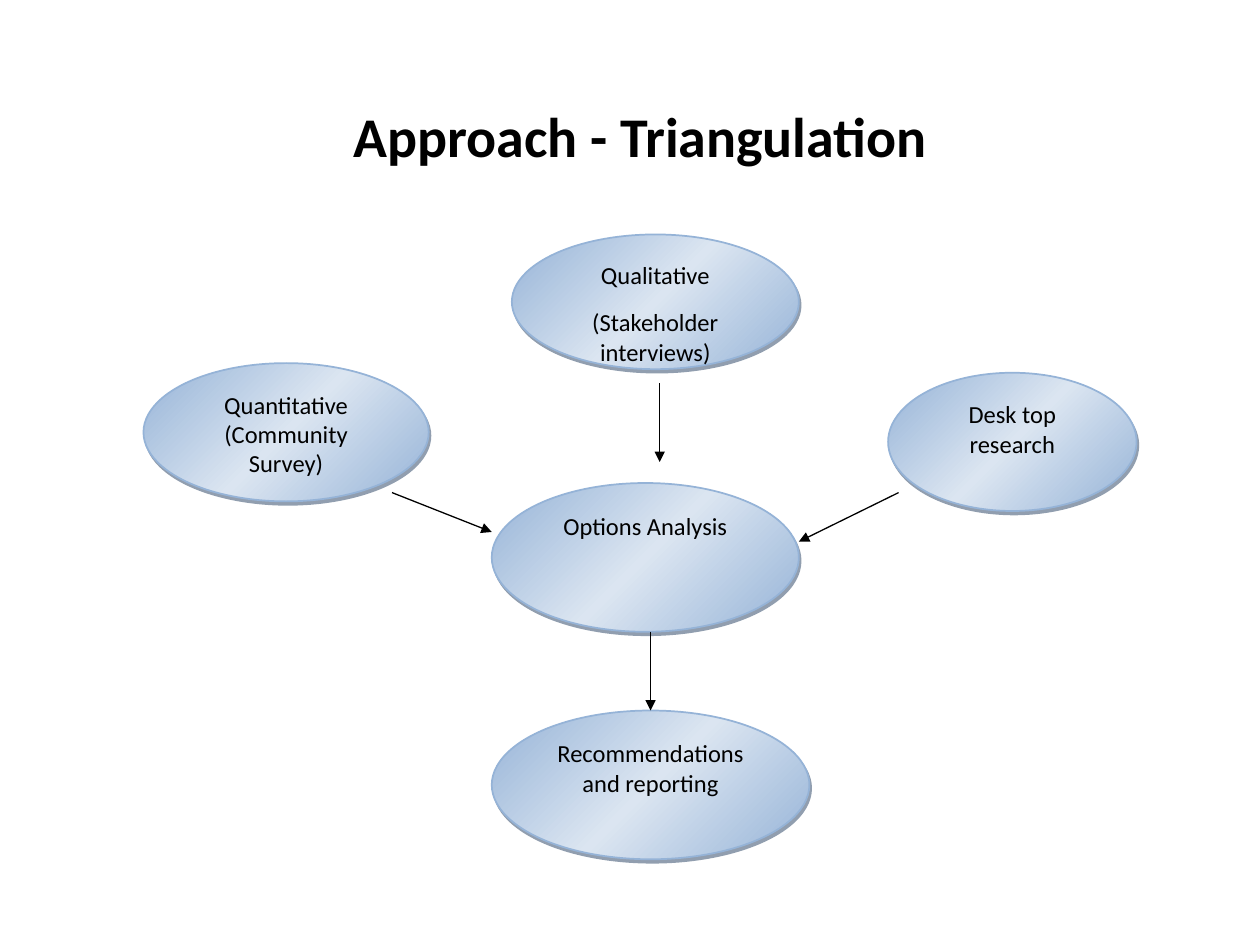
from copy import deepcopy

from lxml.etree import SubElement
from pptx import Presentation
from pptx.dml.color import RGBColor
from pptx.enum.shapes import MSO_CONNECTOR as CONN, MSO_SHAPE as SHAPE
from pptx.enum.text import MSO_ANCHOR as ANCHOR, PP_ALIGN as ALIGN
from pptx.oxml.ns import qn
from pptx.util import Pt

FONT = "Calibri"
COLORS = {"text": "000000", "edge": "95B3D7", "glow": "DBE5F1", "shadow": "243F60"}

# name: (left, top, width, height), paragraphs
NODES = {
    "survey": ((82, 207.5, 163, 79), ["Quantitative\n(Community Survey)"]),
    "interviews": ((292.5, 134, 164, 77), ["Qualitative", "(Stakeholder interviews)"]),
    "research": ((507.5, 213, 142, 79), ["Desk top research"]),
    "analysis": ((281, 276, 175.5, 85), ["Options Analysis"]),
    "reporting": ((281, 406, 181.5, 85), ["Recommendations and reporting"]),
}
# start, end, node whose top the arrow meets
ARROWS = [
    ((224, 281.5), (281, 304), None),
    ((377, 219), (377, 264), None),
    ((513.5, 281.5), (456.5, 309.5), None),
    ((371.75, 361), (371.75, 406), "reporting"),
]


def color(name):
    return RGBColor.from_string(COLORS[name])


def write(tf, lines, size, bold=False, after=0):
    tf.word_wrap = True
    for i, line in enumerate(lines):
        p = tf.paragraphs[0] if i == 0 else tf.add_paragraph()
        p.text = line
        p.alignment = ALIGN.CENTER
        p.space_after = Pt(after)
        for r in p.runs:
            r.font.name, r.font.size, r.font.bold = FONT, Pt(size), bold
            r.font.color.rgb = color("text")


def add_title(slide, box, text):
    tf = slide.shapes.add_textbox(*map(Pt, box)).text_frame
    write(tf, [text], 32, bold=True)
    tf.vertical_anchor = ANCHOR.MIDDLE


def fill_gradient(sp):
    """Edge colour at both ends, a light band in the middle."""
    sp.fill.gradient()
    sp.fill.gradient_angle = 315
    stops = sp._element.spPr.find(qn("a:gradFill")).find(qn("a:gsLst"))
    stops.insert(1, deepcopy(stops[0]))
    for stop, pos, name in zip(sp.fill.gradient_stops, (0, 0.5, 1),
                               ("edge", "glow", "edge")):
        stop.position = pos
        stop.color.rgb = color(name)


def add_shadow(sp):
    sp.shadow.inherit = False
    effects = sp._element.spPr.find(qn("a:effectLst"))
    shadow = SubElement(effects, qn("a:outerShdw"), dist=str(Pt(2.2)),
                        dir=str(63 * 60000), algn="ctr", rotWithShape="0")
    rgb = SubElement(shadow, qn("a:srgbClr"), val=COLORS["shadow"])
    SubElement(rgb, qn("a:alpha"), val="50000")


def add_node(slide, box, lines):
    sp = slide.shapes.add_shape(SHAPE.OVAL, *map(Pt, box))
    fill_gradient(sp)
    sp.line.color.rgb = color("edge")
    sp.line.width = Pt(1)
    add_shadow(sp)
    write(sp.text_frame, lines, 14, after=10)
    sp.text_frame.vertical_anchor = ANCHOR.TOP
    return sp


def add_arrow(slide, start, end, target=None):
    cx = slide.shapes.add_connector(CONN.STRAIGHT, *map(Pt, start + end))
    cx.line.color.rgb = color("text")
    cx.line.width = Pt(0.75)
    SubElement(cx.line._get_or_add_ln(), qn("a:tailEnd"), type="triangle")
    SubElement(cx._element.spPr, qn("a:effectLst"))
    if target is not None:
        cx.end_connect(target, 0)


def add_diagram(slide):
    nodes = {name: add_node(slide, *node) for name, node in NODES.items()}
    for start, end, target in ARROWS:
        add_arrow(slide, start, end, nodes.get(target))


def main():
    prs = Presentation()
    prs.slide_width, prs.slide_height = Pt(720), Pt(540)
    slide = prs.slides.add_slide(prs.slide_layouts[6])
    add_title(slide, (60, 37.5, 612, 79), "Approach - Triangulation")
    add_diagram(slide)
    prs.save("out.pptx")


if __name__ == "__main__":
    main()
